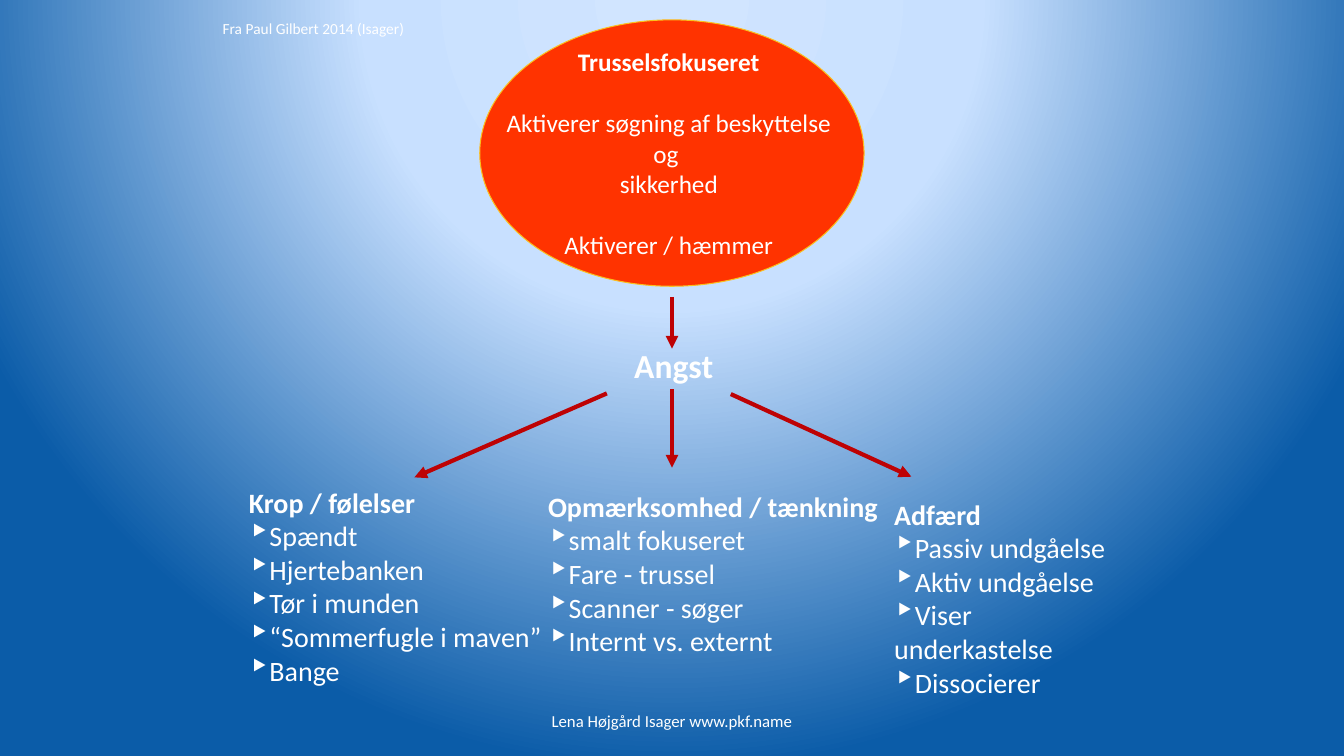
from lxml.etree import SubElement
from pptx import Presentation
from pptx.dml.color import RGBColor
from pptx.enum.shapes import MSO_CONNECTOR, MSO_SHAPE
from pptx.enum.text import MSO_ANCHOR, MSO_AUTO_SIZE, PP_ALIGN
from pptx.oxml import parse_xml
from pptx.oxml.ns import nsdecls, qn
from pptx.util import Pt

WHITE, RED, ARROW_RED, GOLD = "FFFFFF", "FF3300", "BE0204", "FBC01E"
GLOW = [(0, "D1E5FF"), (40, "C8E0FF"), (100, "0B5CA8")]
LABEL_MARGINS = (0, 0, 3, 0)


def color(value):
    return RGBColor.from_string(value)


def paint_background(slide):
    stops = "".join(
        f'<a:gs pos="{percent * 1000}"><a:srgbClr val="{value}"/></a:gs>'
        for percent, value in GLOW)
    background = parse_xml(
        f'<p:bg {nsdecls("p", "a")}><p:bgPr><a:gradFill rotWithShape="1">'
        f'<a:gsLst>{stops}</a:gsLst><a:path path="circle">'
        '<a:fillToRect l="50000" t="-80000" r="50000" b="180000"/></a:path>'
        '</a:gradFill><a:effectLst/></p:bgPr></p:bg>')
    slide.element.cSld.insert(0, background)


def add_frame(shapes, box, margins, wrap, anchor=MSO_ANCHOR.TOP):
    """Add a text box; margins run left, top, right, bottom."""
    frame = shapes.add_textbox(*map(Pt, box)).text_frame
    (frame.margin_left, frame.margin_top,
     frame.margin_right, frame.margin_bottom) = map(Pt, margins)
    frame.word_wrap = wrap
    frame.auto_size = MSO_AUTO_SIZE.NONE if wrap else MSO_AUTO_SIZE.SHAPE_TO_FIT_TEXT
    frame.vertical_anchor = anchor
    return frame


def write_line(frame, text, size, bold=False, first=False, indent=0.0,
               align=PP_ALIGN.LEFT, space_before=0, bullet=False):
    paragraph = frame.paragraphs[0] if first else frame.add_paragraph()
    paragraph.alignment = align
    paragraph.space_before = Pt(space_before)
    properties = paragraph._p.get_or_add_pPr()
    properties.set("marL", str(Pt(indent)))
    properties.set("indent", "0")
    if bullet:
        SubElement(properties, qn("a:buSzPct")).set("val", "125000")
        SubElement(properties, qn("a:buChar")).set("char", "‣")
    run = paragraph.add_run()
    run.text = text
    run.font.name = "Calibri"
    run.font.size = Pt(size)
    run.font.bold = bold
    run.font.color.rgb = color(WHITE)


def add_threat_system(slide, left, top, width, height):
    group = slide.shapes.add_group_shape()
    ellipse = group.shapes.add_shape(
        MSO_SHAPE.OVAL, Pt(left), Pt(top), Pt(width), Pt(height))
    ellipse.shadow.inherit = False
    ellipse.fill.solid()
    ellipse.fill.fore_color.rgb = color(RED)
    ellipse.line.color.rgb = color(GOLD)
    ellipse.line.width = Pt(0.75)
    text_box = (left + 13, top + 20.5, width - 26, height - 41)
    frame = add_frame(group.shapes, text_box, (3, 3, 9, 3), True, MSO_ANCHOR.MIDDLE)
    lines = [("Trusselsfokuseret", 0),
             ("Aktiverer søgning af beskyttelse og ", 22),
             ("sikkerhed", 0),
             ("Aktiverer / hæmmer", 22)]
    for index, (text, gap) in enumerate(lines):
        write_line(frame, text, 18, bold=index == 0, first=index == 0, indent=1.5,
                   align=PP_ALIGN.CENTER, space_before=gap)


def add_arrow(slide, start, end):
    arrow = slide.shapes.add_connector(
        MSO_CONNECTOR.STRAIGHT, *map(Pt, (*start, *end)))
    arrow.line.color.rgb = color(ARROW_RED)
    arrow.line.width = Pt(3)
    SubElement(arrow.line._get_or_add_ln(), qn("a:tailEnd")).set("type", "triangle")
    SubElement(arrow._element.spPr, qn("a:effectLst"))


def add_label(slide, box, text, size, bold=False):
    frame = add_frame(slide.shapes, box, LABEL_MARGINS, False)
    write_line(frame, text, size, bold, first=True, indent=3)


def add_response_list(slide, box, heading, items):
    frame = add_frame(slide.shapes, box, LABEL_MARGINS, False)
    write_line(frame, heading, 20, bold=True, first=True, indent=3)
    for item in items:
        write_line(frame, item, 20, indent=3, bullet=True)


def add_footer(slide, box):
    frame = add_frame(slide.shapes, box, (7.2, 3.6, 7.2, 3.6), True, MSO_ANCHOR.MIDDLE)
    write_line(frame, "Lena Højgård Isager www.pkf.name", 12, first=True,
               align=PP_ALIGN.CENTER)


def build_slide(presentation):
    slide = presentation.slides.add_slide(presentation.slide_layouts[6])
    paint_background(slide)
    add_threat_system(slide, 342.7, 14.2, 274.5, 190.3)
    arrows = [((522, 281.5), (651, 340.5)),
              ((480, 278), (480, 334)),
              ((433.5, 281), (296, 341)),
              ((480, 212), (480, 249))]
    for start, end in arrows:
        add_arrow(slide, start, end)
    add_label(slide, (450, 246.5, 62.5, 29), "Angst", 24, bold=True)
    responses = [
        ((388.5, 349.5, 243.5, 121), "Opmærksomhed / tænkning",
         ["smalt fokuseret", "Fare - trussel", "Scanner - søger",
          "Internt vs. externt"]),
        ((174.7, 346.5, 217.5, 145), "Krop / følelser",
         ["Spændt", "Hjertebanken", "Tør i munden", "“Sommerfugle i maven”",
          "Bange"]),
        ((635.7, 355, 178, 121), "Adfærd",
         ["Passiv undgåelse", "Aktiv undgåelse", "Viser underkastelse",
          "Dissocierer"])]
    for box, heading, items in responses:
        add_response_list(slide, box, heading, items)
    add_footer(slide, (328, 500.5, 304, 29))
    add_label(slide, (156, 14, 137.5, 13.5), "Fra Paul Gilbert 2014 (Isager)", 11)


def main():
    presentation = Presentation()
    presentation.slide_width = Pt(960)
    presentation.slide_height = Pt(540)
    build_slide(presentation)
    presentation.save("out.pptx")


if __name__ == "__main__":
    main()
